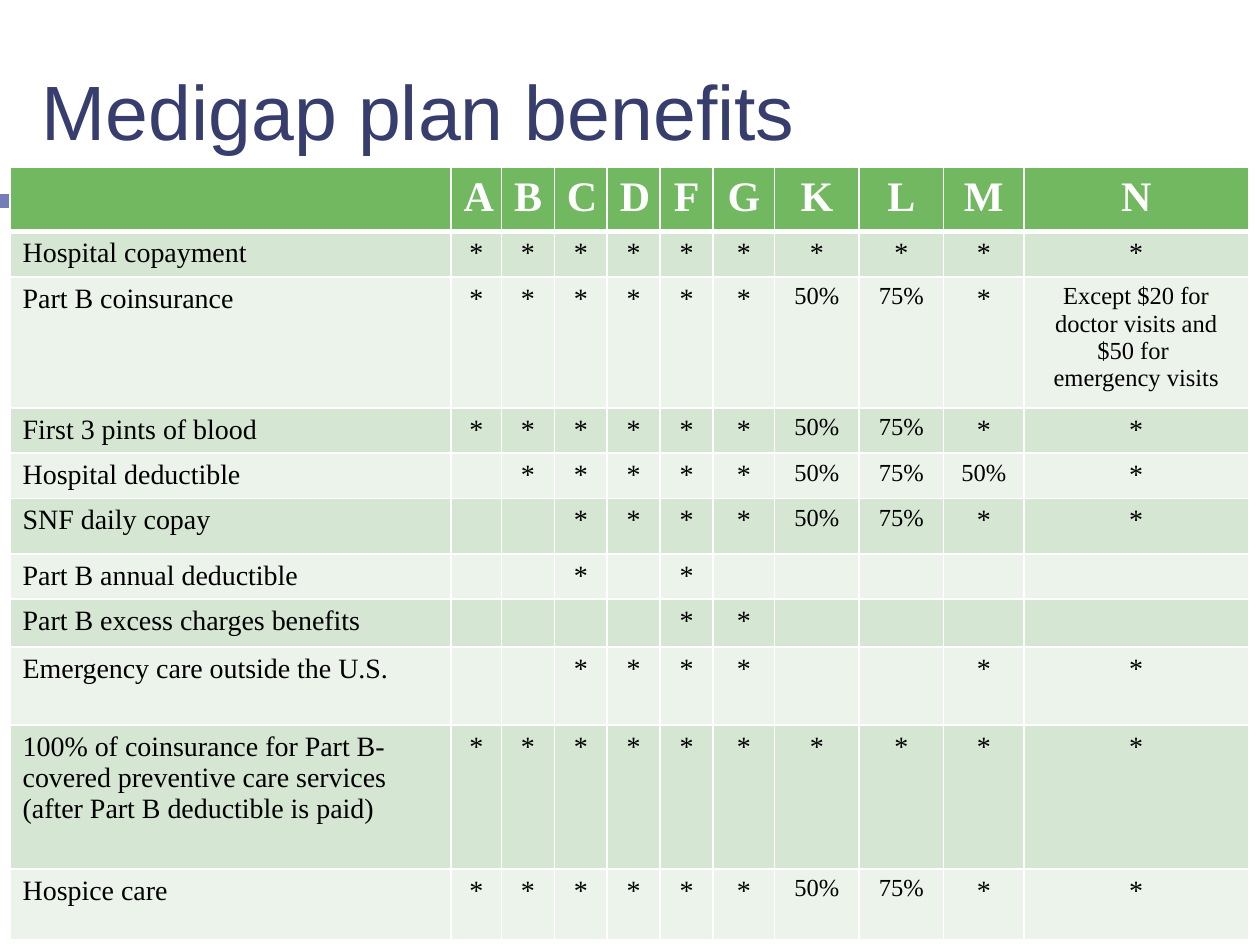
from dataclasses import dataclass

from lxml import etree
from pptx import Presentation
from pptx import util as u
from pptx.dml import color
from pptx.enum import shapes, text
from pptx.oxml import ns

WHITE, BLACK, NAVY = "FFFFFF", "000000", "373D6D"
GREEN, BANDS = "71B861", ("D5E6D2", "EBF3EA")
SERIF = "Times New Roman"
PLANS = "A B C D F G K L M N".split()
WIDTHS = [252, 28.8] + [30.24] * 4 + [35.28] + [48.24] * 2 + [46.08, 128.16]
HEADER_HEIGHT = 28.08
ENTRIES = {
    "-": "",
    "note": "Except $20 for doctor visits and $50 for \nemergency visits",
}


@dataclass
class Bar:
    left: float
    width: float
    fill: str


@dataclass
class Benefit:
    name: str
    height: float
    marks: str


@dataclass
class CellStyle:
    fill: str
    size: float
    ink: str = BLACK
    bold: bool = False
    centered: bool = True
    top: float = 1
    bottom: float = 1


BARS = [
    Bar(467.28, 56.88, "3A8A36"),
    Bar(524.16, 56.88, GREEN),
    Bar(0, 56.88, "757DB9"),
    Bar(56.88, 411.12, NAVY),
]

BENEFITS = [
    Benefit("Hospital copayment", 25.92, "* * * * * * * * * *"),
    Benefit("Part B coinsurance", 74.88, "* * * * * * 50% 75% * note"),
    Benefit("First 3 pints of blood", 25.92, "* * * * * * 50% 75% * *"),
    Benefit("Hospital deductible", 25.92, "- * * * * * 50% 75% 50% *"),
    Benefit("SNF daily copay", 31.68, "- - * * * * 50% 75% * *"),
    Benefit("Part B annual deductible", 25.92, "- - * - * - - - - -"),
    Benefit("Part B excess charges benefits", 27.36, "- - - - * * - - - -"),
    Benefit("Emergency care outside the U.S.", 44.64, "- - * * * * - - * *"),
    Benefit(
        "100% of coinsurance for Part B-covered preventive care services "
        "(after Part B deductible is paid)",
        82.08,
        "* * * * * * * * * *",
    ),
    Benefit("Hospice care", 40.32, "* * * * * * 50% 75% * *"),
]


def rgb(code: str) -> color.RGBColor:
    return color.RGBColor.from_string(code)


def draw_bar(page, bar: Bar) -> None:
    box = page.shapes.add_shape(
        shapes.MSO_SHAPE.RECTANGLE, u.Pt(bar.left), u.Pt(110.88), u.Pt(bar.width), u.Pt(7.92)
    )
    box.shadow.inherit = False
    box.fill.solid()
    box.fill.fore_color.rgb = rgb(bar.fill)
    box.line.fill.background()


def set_title(page, words: str) -> None:
    title = page.shapes.title
    title.left, title.top = u.Pt(16.56), u.Pt(33.12)
    title.width, title.height = u.Pt(620.64), u.Pt(65.52)
    frame = title.text_frame
    frame.text = words
    frame.vertical_anchor = text.MSO_ANCHOR.MIDDLE
    para = frame.paragraphs[0]
    para.alignment = text.PP_ALIGN.LEFT
    para.line_spacing = 0.9
    font = para.runs[0].font
    font.name, font.size = "Arial", u.Pt(44)
    font.color.rgb = rgb(NAVY)


def set_borders(cell, top: float, bottom: float) -> None:
    properties = cell._tc.get_or_add_tcPr()
    for side, points in (("L", 1), ("R", 1), ("T", top), ("B", bottom)):
        line = etree.SubElement(properties, ns.qn(f"a:ln{side}"), w=str(u.Pt(points)))
        fill = etree.SubElement(line, ns.qn("a:solidFill"))
        etree.SubElement(fill, ns.qn("a:srgbClr"), val=WHITE)


def fill_cell(cell, words: str, style: CellStyle) -> None:
    set_borders(cell, style.top, style.bottom)
    cell.fill.solid()
    cell.fill.fore_color.rgb = rgb(style.fill)
    cell.text_frame.text = words
    for para in cell.text_frame.paragraphs:
        para.alignment = text.PP_ALIGN.CENTER if style.centered else text.PP_ALIGN.LEFT
        for span in para.runs:
            font = span.font
            font.name, font.size, font.bold = SERIF, u.Pt(style.size), style.bold
            font.color.rgb = rgb(style.ink)
        if not para.runs:
            etree.SubElement(para._p, ns.qn("a:endParaRPr"), sz=str(int(style.size * 100)))


def draw_table(page) -> None:
    heights = [HEADER_HEIGHT] + [benefit.height for benefit in BENEFITS]
    frame = page.shapes.add_table(
        len(heights), len(WIDTHS), u.Pt(5.76), u.Pt(95.76), u.Pt(sum(WIDTHS)), u.Pt(sum(heights))
    )
    table = frame.table
    table.first_row = table.horz_banding = False
    for column, width in zip(table.columns, WIDTHS):
        column.width = u.Pt(width)
    for row, height in zip(table.rows, heights):
        row.height = u.Pt(height)

    header = CellStyle(GREEN, 24, WHITE, bold=True, bottom=3)
    for index, plan in enumerate([""] + PLANS):
        fill_cell(table.cell(0, index), plan, header)

    for number, benefit in enumerate(BENEFITS, start=1):
        band = BANDS[(number - 1) % 2]
        top = 3 if number == 1 else 1
        fill_cell(table.cell(number, 0), benefit.name, CellStyle(band, 16, centered=False, top=top))
        for index, mark in enumerate(benefit.marks.split(), start=1):
            size = 16 if mark == "*" else 14
            words = ENTRIES.get(mark, mark)
            fill_cell(table.cell(number, index), words, CellStyle(band, size, top=top))


def main() -> None:
    deck = Presentation()
    deck.slide_width, deck.slide_height = u.Pt(720), u.Pt(540)
    page = deck.slides.add_slide(deck.slide_layouts[5])
    set_title(page, "Medigap plan benefits")
    for bar in BARS:
        draw_bar(page, bar)
    draw_table(page)
    deck.save("out.pptx")


if __name__ == "__main__":
    main()
